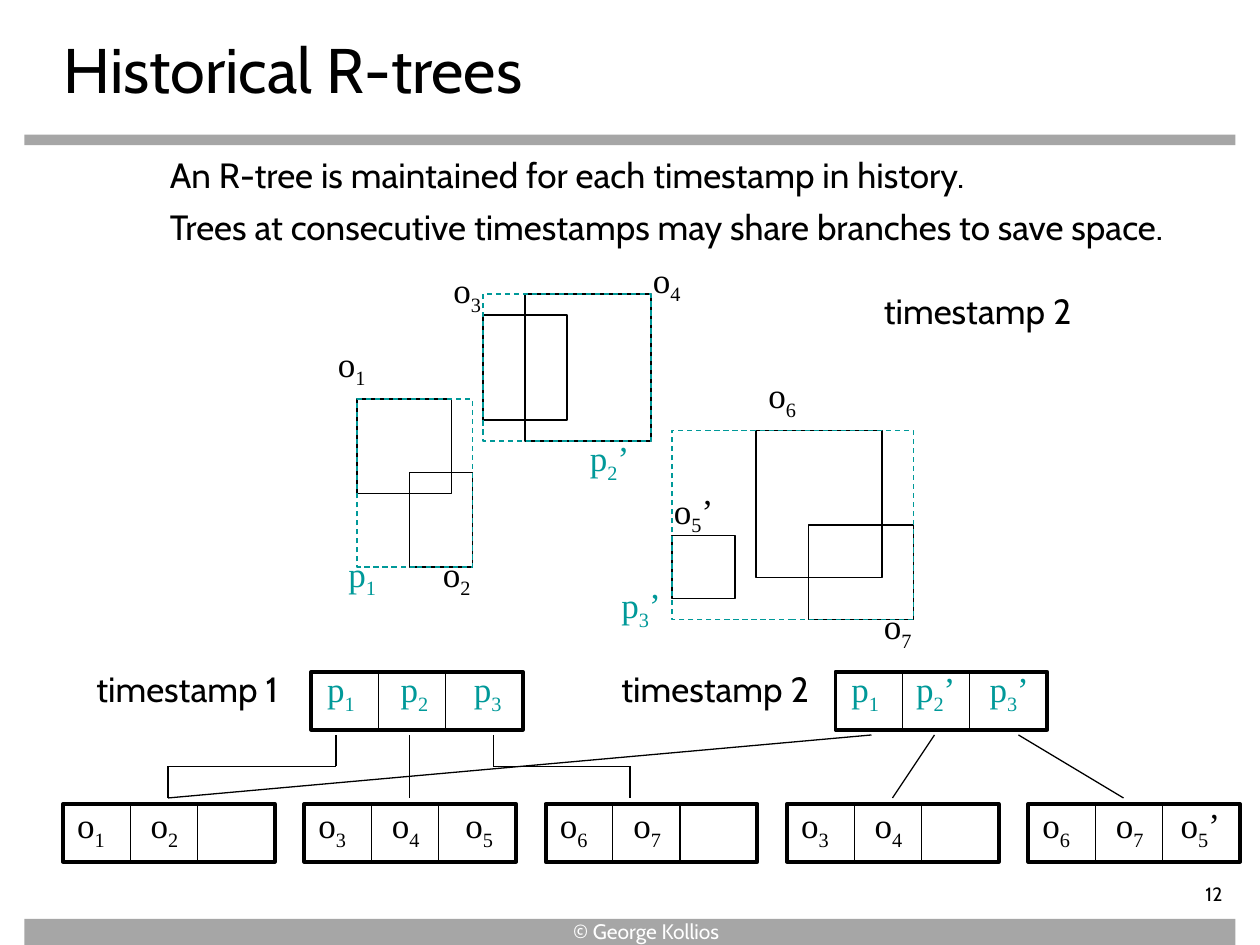
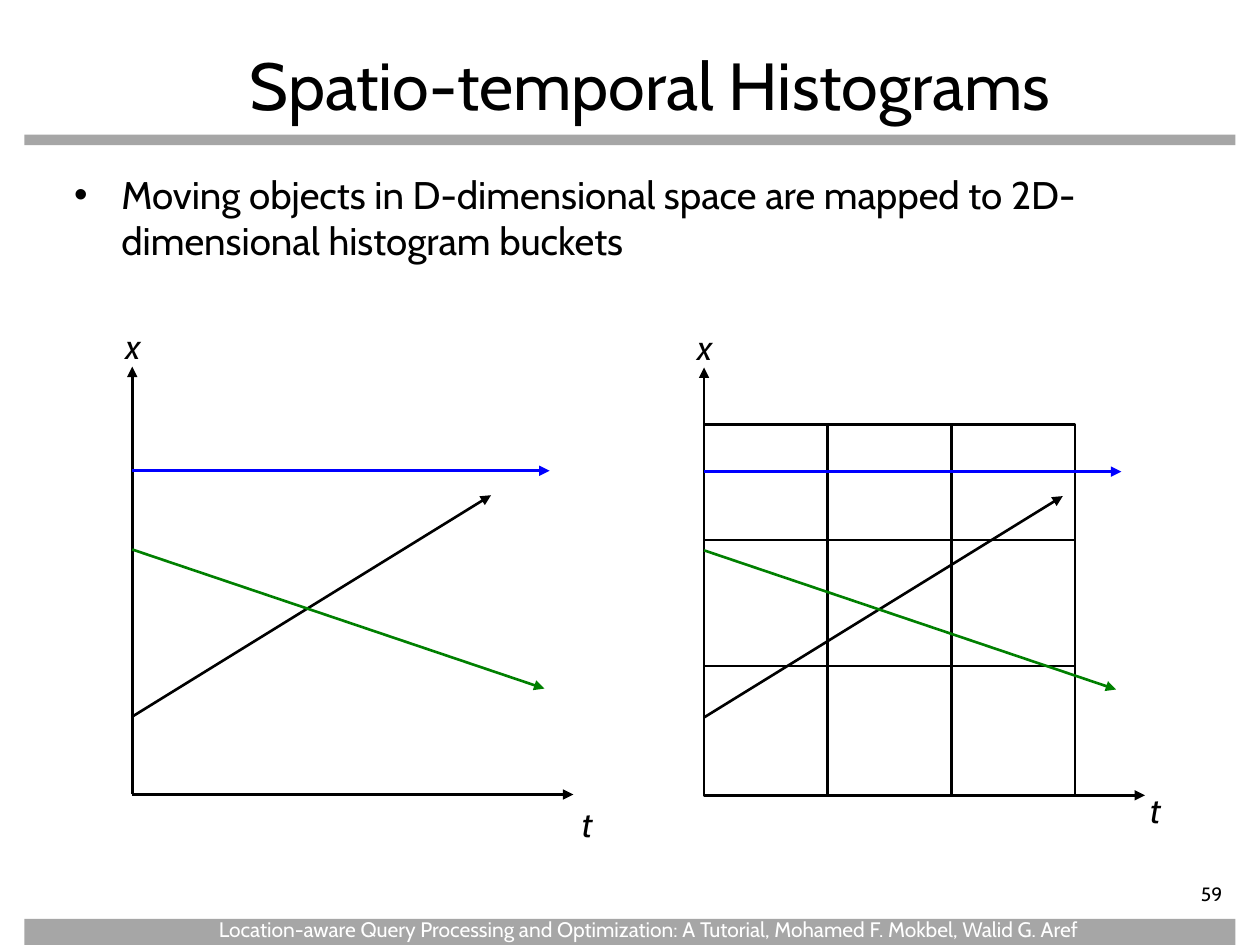
import pptx
import pptx.util
import pptx.dml.color
import pptx.enum.dml
import pptx.enum.shapes
import pptx.enum.text
import pptx.oxml
import pptx.oxml.ns

Pt = pptx.util.Pt
RGBColor = pptx.dml.color.RGBColor
SHAPE = pptx.enum.shapes.MSO_SHAPE
ALIGN = pptx.enum.text.PP_ALIGN
ANCHOR = pptx.enum.text.MSO_ANCHOR
DASH = pptx.enum.dml.MSO_LINE

BLACK = RGBColor(0x00, 0x00, 0x00)
WHITE = RGBColor(0xFF, 0xFF, 0xFF)
GREY = RGBColor(0xA6, 0xA6, 0xA6)
TEAL = RGBColor(0x00, 0x99, 0x99)
BLUE = RGBColor(0x00, 0x00, 0xFF)
GREEN = RGBColor(0x00, 0x80, 0x00)

SANS = "Cabin"
SERIF = "Times New Roman"
LABEL_H = 31
NODE_W, NODE_H, CELL_W = 121, 33, 38.4
LABEL_STEP = 42
PRIME_SHIFT = 5
LEAF_STEP = 137.9


def add_sub(parent, tag, **attrs):
    el = parent.makeelement(pptx.oxml.ns.qn(tag), attrs)
    parent.append(el)
    return el


def style(r, size, color=BLACK, font=SANS, italic=None):
    r.font.size = Pt(size)
    r.font.name = font
    r.font.color.rgb = color
    r.font.italic = italic


def add_text(s, x, y, w, h, text, size=20, color=BLACK, italic=None,
             align=ALIGN.LEFT, anchor=ANCHOR.TOP, wrap=True):
    tf = s.shapes.add_textbox(Pt(x), Pt(y), Pt(w), Pt(h)).text_frame
    tf.word_wrap = wrap
    tf.vertical_anchor = anchor
    tf.text = text
    p = tf.paragraphs[0]
    p.alignment = align
    style(p.runs[0], size, color, italic=italic)
    return tf


def add_label(s, x, y, name):
    """Write a name such as o5’ with its digit as a subscript; p names are teal."""
    tf = s.shapes.add_textbox(Pt(x), Pt(y), Pt(72), Pt(LABEL_H)).text_frame
    tf.word_wrap = True
    p = tf.paragraphs[0]
    for ch in name:
        r = p.add_run()
        r.text = ch
        style(r, 20, TEAL if name[0] == "p" else BLACK, SERIF)
        if ch.isdigit():
            r.font._element.set("baseline", "-25000")


def add_rect(s, x, y, w, h, line=None, width=0.75, fill=None, dash=False):
    sp = s.shapes.add_shape(SHAPE.RECTANGLE, Pt(x), Pt(y), Pt(w), Pt(h))
    sp.shadow.inherit = False
    if fill is None:
        sp.fill.background()
    else:
        sp.fill.solid()
        sp.fill.fore_color.rgb = fill
    if line is None:
        sp.line.fill.background()
    else:
        sp.line.color.rgb = line
        sp.line.width = Pt(width)
    if dash:
        sp.line.dash_style = DASH.DASH


def add_line(s, start, end, color=BLACK, width=0.75, arrow=False):
    cn = s.shapes.add_connector(pptx.enum.shapes.MSO_CONNECTOR.STRAIGHT,
                                *map(Pt, (*start, *end)))
    cn.line.color.rgb = color
    cn.line.width = Pt(width)
    if arrow:
        add_sub(cn.line._get_or_add_ln(), "a:tailEnd", type="triangle")
    add_sub(cn._element.spPr, "a:effectLst")


def add_base(prs, number):
    """Add a slide with the two grey bands and the slide number."""
    s = prs.slides.add_slide(prs.slide_layouts[6])
    for y, h in ((77, 6), (525, 15)):
        add_rect(s, 14, y, 692, h, fill=GREY)
    tf = add_text(s, 626.4, 504, 79.2, 16, number, 11, align=ALIGN.RIGHT)
    tf.margin_left = tf.margin_top = tf.margin_bottom = 0
    return s


def add_footer(s, x, y, w, text, wrap=True):
    add_text(s, x, y, w, 21.6, text, 12, WHITE, wrap=wrap)


def add_object_map(s, left, top):
    """Draw the objects and the dashed bounding boxes of the R-tree pages."""
    objects = [(18, 84, 54, 54), (48, 126, 36, 54), (90, 36, 48, 60), (114, 24, 72, 84),
               (198, 162, 36, 36), (246, 102, 72, 84), (276, 156, 60, 54)]
    pages = [(18, 84, 66, 96), (90, 24, 96, 84), (198, 102, 138, 108)]
    labels = {"o1": (0, 48), "o2": (60, 168), "o3": (66, 6), "o4": (180, 0),
              "o5’": (192, 132), "o6": (246, 66), "o7": (312, 198),
              "p1": (6, 168), "p2’": (144, 102), "p3’": (162, 186)}
    for x, y, w, h in objects:
        add_rect(s, left + x, top + y, w, h, BLACK)
    for x, y, w, h in pages:
        add_rect(s, left + x, top + y, w, h, TEAL, dash=True)
    for name, (x, y) in labels.items():
        add_label(s, left + x, top + y, name)
    add_text(s, left + 312, top + 18, 144, LABEL_H, "timestamp 2")


def add_node(s, x, y, names, dx=1, dy=-3.6):
    """Draw a three-cell tree node; dx and dy offset its labels."""
    add_rect(s, x, y, NODE_W, NODE_H, BLACK, 2.25)
    for i in (1, 2):
        add_line(s, (x + i * CELL_W, y), (x + i * CELL_W, y + NODE_H))
    for i, name in enumerate(names):
        shift = PRIME_SHIFT if name.endswith("’") else 0
        add_label(s, x + dx + i * LABEL_STEP - shift, y + dy, name)


def add_trees(s, left, top):
    roots = [(12, "timestamp 1", 141.8, ["p1", "p2", "p3"]),
             (312, "timestamp 2", 441.4, ["p1", "p2’", "p3’"])]
    leaves = [["o1", "o2"], ["o3", "o4", "o5"], ["o6", "o7"],
              ["o3", "o4"], ["o6", "o7", "o5’"]]
    branches = [[(156, 42), (156, 60), (60, 60), (60, 78)],
                [(198, 42), (198, 78)],
                [(246, 42), (246, 60), (324, 60), (324, 78)],
                [(462, 42), (60, 78)],
                [(498, 42), (474, 78)],
                [(546, 42), (606, 78)]]
    for text_x, text, x, names in roots:
        add_text(s, left + text_x, top, 144, LABEL_H, text)
        add_node(s, left + x, top + 6, names, dx=2, dy=-6)
    for i, names in enumerate(leaves):
        add_node(s, left + i * LEAF_STEP, top + 81.4, names)
    for points in branches:
        points = [(left + x, top + y) for x, y in points]
        for start, end in zip(points, points[1:]):
            add_line(s, start, end)


def add_plot(s, x0, y0, t_pos, grid=False):
    """Draw axes x and t from their origin, with three moving objects."""
    def line(x1, y1, x2, y2, color=BLACK, arrow=True):
        add_line(s, (x0 + x1, y0 - y1), (x0 + x2, y0 - y2), color, 1.5, arrow)

    if grid:
        side = 212
        add_rect(s, x0, y0 - side, side, side, BLACK, 1.5)
        for i in (1, 2):
            line(i * side / 3, 0, i * side / 3, side, arrow=False)
        for y in (74, 146):
            line(0, y, side, y, arrow=False)
    line(0, 0, 0, 244.5)
    line(0, 0, 252, 0)
    line(0, 44.5, 205, 171)
    line(0, 185, 238.5, 185, BLUE)
    line(0, 140, 235.5, 60.5, GREEN)
    for name, (x, y) in (("x", (-11, -272)), ("t", t_pos)):
        add_text(s, x0 + x, y0 + y, 26, LABEL_H, name, italic=True)


def build_rtree_slide(prs):
    s = add_base(prs, "12")
    add_text(s, 29.5, 18, 612, 42, "Historical R-trees", 36, anchor=ANCHOR.MIDDLE)
    add_text(s, 90, 84, 552, LABEL_H,
             "An R-tree is maintained for each timestamp in history.")
    add_text(s, 90, 114, 594, LABEL_H,
             "Trees at consecutive timestamps may share branches to save space.")
    add_object_map(s, 186, 144)
    add_trees(s, 36, 378)
    add_footer(s, 320.4, 521.3, 101, "© George Kollios", wrap=False)


def build_histogram_slide(prs):
    s = add_base(prs, "59")
    add_text(s, 59, 21.6, 625, 55.4, "Spatio-temporal Histograms", 38, align=ALIGN.CENTER)
    tf = add_text(s, 35.3, 94.3, 657.4, 80.6, "Moving objects in D-dimensional space are "
                  "mapped to 2D-dimensional histogram buckets", 22)
    pPr = tf.paragraphs[0]._p.get_or_add_pPr()
    pPr.set("marL", str(Pt(27)))
    pPr.set("indent", str(-Pt(27)))
    add_sub(pPr, "a:buFont", typeface="Arial")
    add_sub(pPr, "a:buChar", char="•")
    add_plot(s, 75.6, 454, (249.8, 1))
    add_plot(s, 402.3, 454.5, (247.8, -7.4), grid=True)
    add_footer(s, 118, 520, 561.6, "Location-aware Query Processing and Optimization: "
               "A Tutorial, Mohamed F. Mokbel, Walid G. Aref")


def main():
    prs = pptx.Presentation()
    prs.slide_width, prs.slide_height = Pt(720), Pt(540)
    build_rtree_slide(prs)
    build_histogram_slide(prs)
    prs.save("out.pptx")


if __name__ == "__main__":
    main()
